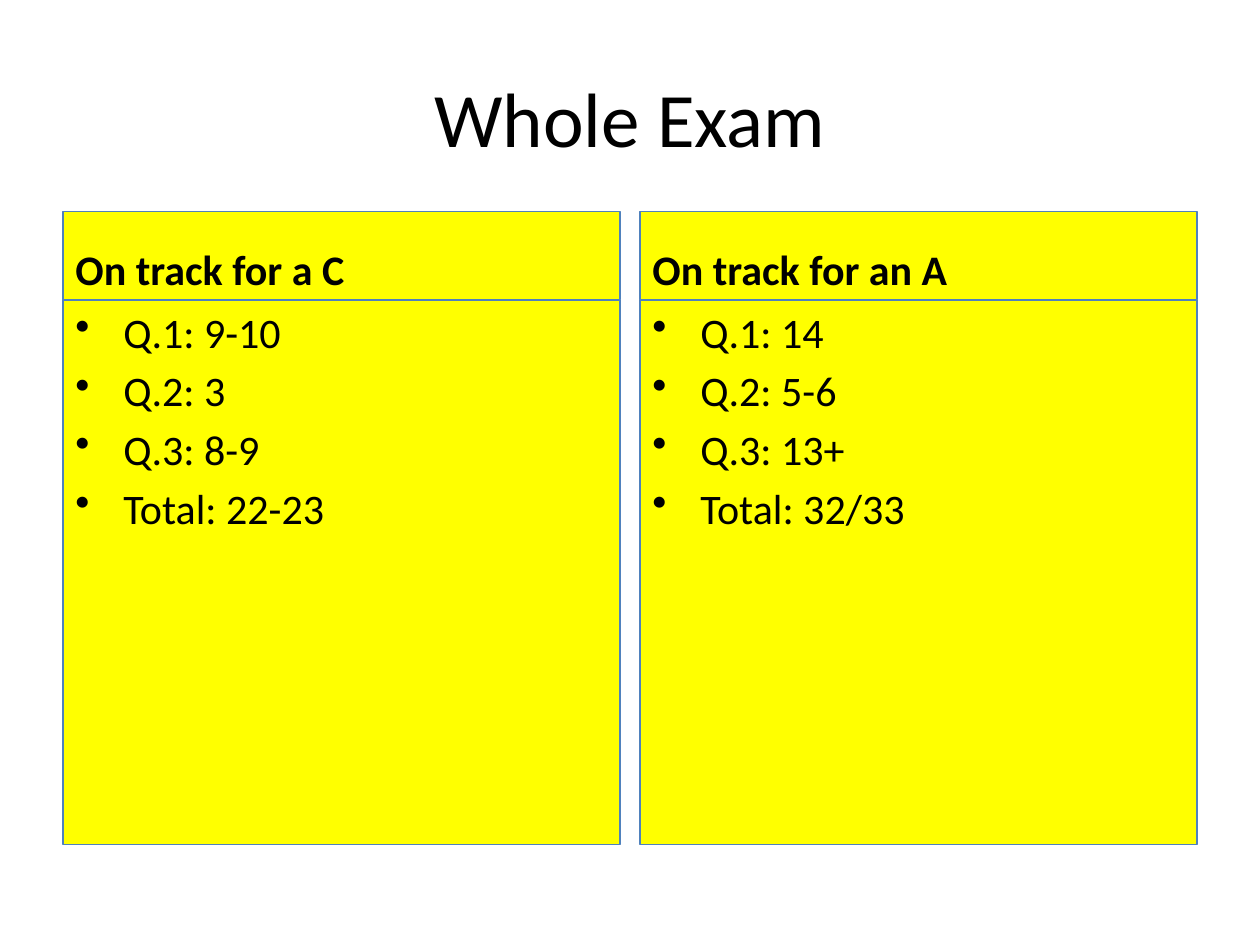
from pptx import Presentation
from pptx.dml.color import RGBColor
from pptx.enum.shapes import MSO_SHAPE
from pptx.enum.text import MSO_ANCHOR, PP_ALIGN
from pptx.util import Inches, Pt
from lxml import etree

RECT = MSO_SHAPE.RECTANGLE
TOP, MID, LOW = MSO_ANCHOR.TOP, MSO_ANCHOR.MIDDLE, MSO_ANCHOR.BOTTOM
LEFT, CENTER = PP_ALIGN.LEFT, PP_ALIGN.CENTER
NS = "http://schemas.openxmlformats.org/drawingml/2006/main"

THEME = {
    "font": "Calibri", "title": Pt(44), "body": Pt(24), "gap": Pt(4.8),
    "ink": RGBColor.from_string("000000"),
    "fill": RGBColor.from_string("FFFF00"),
    "edge": RGBColor.from_string("4F81BD"),
}

# Grid: two equal columns between the margins
WIDE, HIGH = 10, 7.5
MARGIN, GUTTER = 0.5, 0.16
COL = (WIDE - 2 * MARGIN - GUTTER) / 2
HEAD_TOP, HEAD_H, LIST_H = 1.68, 0.7, 4.32
INDENT = Inches(0.38)

TRACKS = [
    ("On track for a C", ["Q.1: 9-10", "Q.2: 3", "Q.3: 8-9", "Total: 22-23"]),
    ("On track for an A", ["Q.1: 14", "Q.2: 5-6", "Q.3: 13+", "Total: 32/33"]),
]


def write(shape, lines, size, anchor, align=LEFT, bold=False, gap=Pt(0)):
    frame = shape.text_frame
    frame.word_wrap = True
    frame.vertical_anchor = anchor
    frame.text = "\n".join(lines)
    for para in frame.paragraphs:
        para.alignment = align
        para.space_before = gap
        font = para.font
        font.name, font.size, font.bold = THEME["font"], size, bold
        font.color.rgb = THEME["ink"]


def panel(x, y, high):
    box = slide.shapes.add_shape(
        RECT, Inches(x), Inches(y), Inches(COL), Inches(high))
    box.shadow.inherit = False
    box.fill.solid()
    box.fill.fore_color.rgb = THEME["fill"]
    box.line.color.rgb = THEME["edge"]
    box.line.width = Pt(0.75)
    return box


deck = Presentation()
deck.slide_width, deck.slide_height = Inches(WIDE), Inches(HIGH)
slide = deck.slides.add_slide(deck.slide_layouts[6])

# Title
title = slide.shapes.add_textbox(
    Inches(MARGIN), Inches(0.3), Inches(WIDE - 2 * MARGIN), Inches(1.25))
write(title, ["Whole Exam"], THEME["title"], MID, CENTER)

# One heading and one bulleted list per track
for i, (name, marks) in enumerate(TRACKS):
    x = MARGIN + i * (COL + GUTTER)
    head = panel(x, HEAD_TOP, HEAD_H)
    write(head, [name], THEME["body"], LOW, bold=True, gap=THEME["gap"])
    body = panel(x, HEAD_TOP + HEAD_H, LIST_H)
    write(body, marks, THEME["body"], TOP, gap=THEME["gap"])
    for para in body.text_frame.paragraphs:
        props = para._p.get_or_add_pPr()
        props.set("marL", str(INDENT))
        props.set("indent", str(-INDENT))
        bullet = etree.Element(f"{{{NS}}}buChar", char="•")
        props.find(f"{{{NS}}}defRPr").addprevious(bullet)

deck.save("out.pptx")
